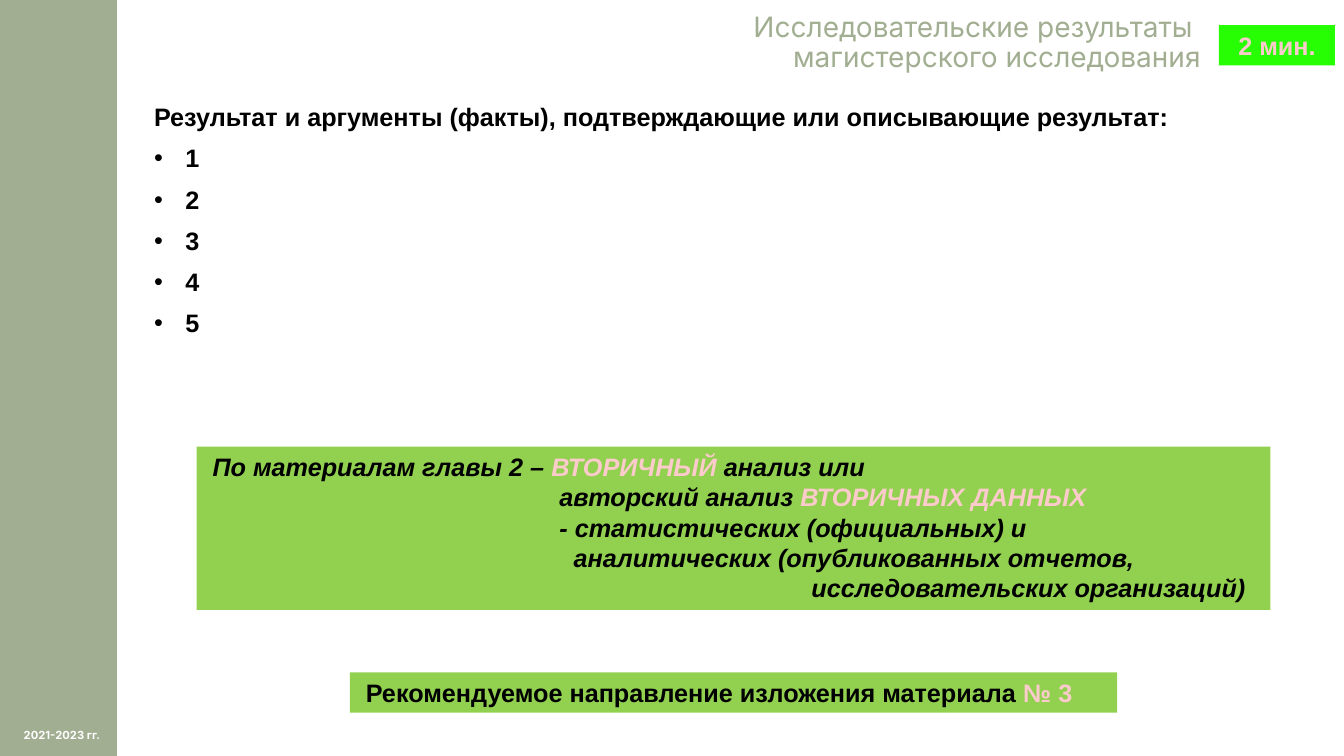
from pptx import Presentation, util as u
from pptx.dml.color import RGBColor
from pptx.enum import shapes, text
from pptx.oxml import parse_xml
from pptx.oxml.ns import nsdecls

PX = 9144
INK = {
    "sage": "A2AE91",
    "white": "FFFFFF",
    "black": "000000",
    "green": "92D050",
    "lime": "27FD03",
    "pink": "FDCBCB",
}
BOLD = {"name": "Arial", "size": u.Pt(18), "bold": True}
ITALIC = {**BOLD, "italic": True}
TITLE = {"name": "Inter", "size": u.Pt(20)}
YEARS = {"name": "Inter", "size": u.Pt(8), "bold": True}
LEFT, MID, RIGHT = text.PP_ALIGN.LEFT, text.PP_ALIGN.CENTER, text.PP_ALIGN.RIGHT


def px(num):
    return u.Emu(num * PX)


def color(name):
    return RGBColor.from_string(INK[name])


def apply(obj, form):
    for key, val in form.items():
        setattr(obj, key, val)


def add_text(slide, box):
    frame = slide.shapes.add_textbox(*map(px, box)).text_frame
    frame.word_wrap = True
    return frame


def add_rect(slide, box, fill):
    rect = slide.shapes.add_shape(shapes.MSO_SHAPE.RECTANGLE, *map(px, box))
    rect.shadow.inherit = False
    rect.fill.solid()
    rect.fill.fore_color.rgb = color(fill)
    rect.line.fill.background()
    frame = rect.text_frame
    apply(frame, {"word_wrap": True, "vertical_anchor": text.MSO_ANCHOR.TOP})
    return frame


def write(frame, index, runs, font, align=LEFT, indent=0, **form):
    para = frame.paragraphs[0] if index == 0 else frame.add_paragraph()
    apply(para, {"alignment": align, **form})
    if indent:
        para._p.get_or_add_pPr().set("marL", str(px(indent)))
    for words, ink in runs:
        run = para.add_run()
        run.text = words
        apply(run.font, font)
        run.font.color.rgb = color(ink)
    return para


def side_bar(slide, box):
    left, top, width, height = box
    add_rect(slide, box, "sage")
    frame = add_text(slide, (left + 7, top + height - 41, width - 7, 41))
    frame.vertical_anchor = text.MSO_ANCHOR.MIDDLE
    write(frame, 0, [("2021-2023 гг.", "white")], YEARS, MID)


def header(slide, box):
    left, top, width, height = box
    frame = add_text(slide, (left, top, width - 133, height))
    apply(frame, dict.fromkeys(
        ("margin_left", "margin_top", "margin_right", "margin_bottom"), 0))
    lines = ["Исследовательские результаты ", "магистерского исследования"]
    for index, line in enumerate(lines):
        write(frame, index, [(line, "sage")], TITLE, RIGHT, line_spacing=0.9)
    badge = add_rect(slide, (left + width - 115, top + 12, 115, 40), "lime")
    write(badge, 0, [("2 мин.", "pink")], BOLD, MID)


def results(slide, box):
    frame = add_text(slide, box)
    head = "Результат и аргументы (факты), подтверждающие или описывающие результат:"
    write(frame, 0, [(head, "black")], BOLD, line_spacing=0.9)
    for num in range(1, 6):
        para = write(frame, num, [(str(num), "black")], BOLD, indent=31,
                     line_spacing=0.9, space_before=u.Pt(10))
        props = para._p.get_or_add_pPr()
        props.set("indent", str(px(-31)))
        props.append(parse_xml(f'<a:buFont {nsdecls("a")} typeface="Arial"/>'))
        props.append(parse_xml(f'<a:buChar {nsdecls("a")} char="•"/>'))


def sources(slide, box):
    frame = add_rect(slide, box, "green")
    lines = [
        (6, [("По материалам главы 2 – ", "black"), ("ВТОРИЧНЫЙ", "pink"),
             (" анализ или", "black")]),
        (350, [("авторский анализ ", "black"), ("ВТОРИЧНЫХ ДАННЫХ", "pink")]),
        (350, [("- статистических (официальных) и", "black")]),
        (364, [("аналитических (опубликованных отчетов,", "black")]),
        (600, [("исследовательских организаций)", "black")]),
    ]
    for index, (indent, runs) in enumerate(lines):
        write(frame, index, runs, ITALIC, indent=indent)


def advice(slide, box):
    frame = add_rect(slide, box, "green")
    runs = [("Рекомендуемое направление изложения материала ", "black"),
            ("№ 3", "pink")]
    write(frame, 0, runs, BOLD, indent=6)


def main():
    deck = Presentation()
    apply(deck, {"slide_width": px(1333), "slide_height": px(750)})
    slide = deck.slides.add_slide(deck.slide_layouts[6])
    side_bar(slide, (0, 0, 116, 750))
    results(slide, (143, 99, 1150, 581))
    sources(slide, (195, 443, 1065, 162))
    advice(slide, (347, 667, 761, 40))
    header(slide, (125, 13, 1199, 70))
    deck.save("out.pptx")


if __name__ == "__main__":
    main()
